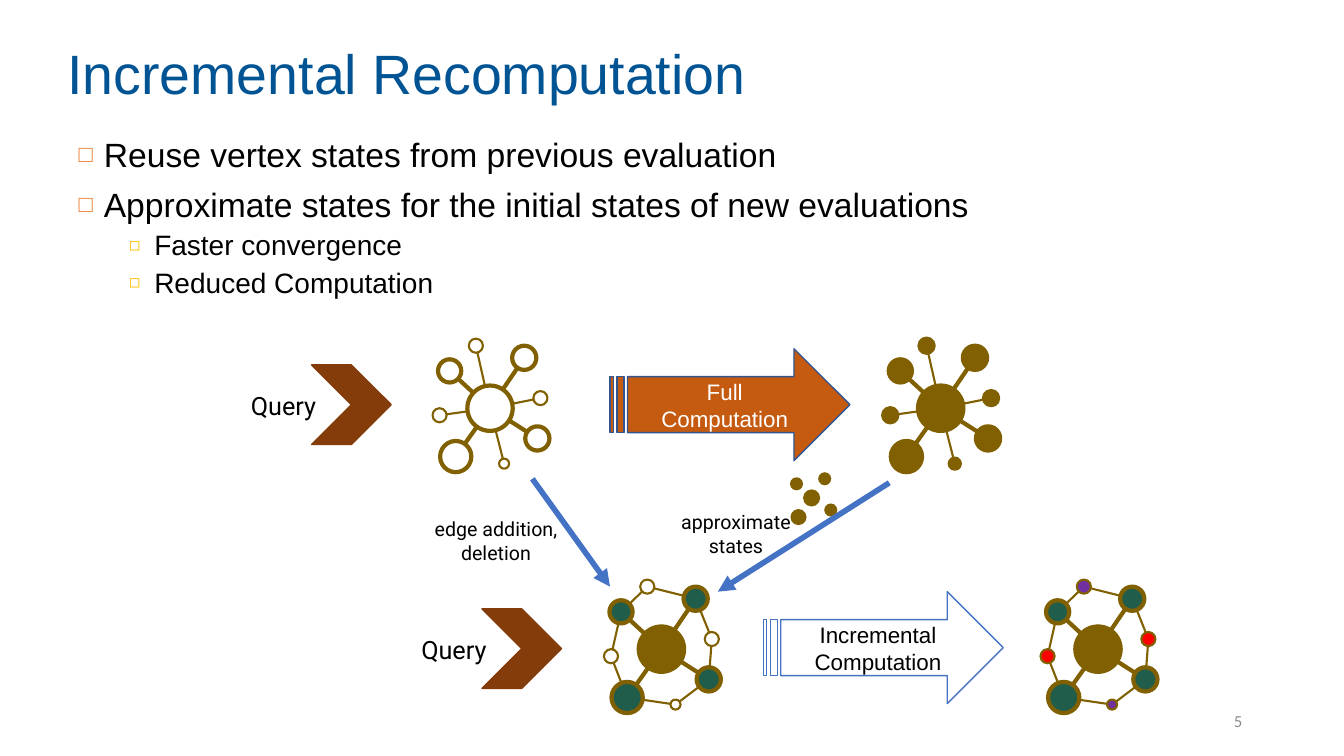
from lxml import etree
from pptx import Presentation
from pptx.dml.color import RGBColor
from pptx.enum import shapes, text
from pptx.oxml import ns
from pptx.util import Inches, Pt

COLORS = {
    "title": "005493", "black": "000000", "white": "FFFFFF", "gray": "8C8C8C",
    "olive": "806000", "green": "215D4B", "purple": "7030A0", "red": "FF0000",
    "rust": "C55A11", "navy": "325491", "blue": "4472C4", "brown": "843C0B",
    "orange": "ED7D31", "gold": "FFC000",
}
SHAPE, ALIGN, ANCHOR = shapes.MSO_SHAPE, text.PP_ALIGN, text.MSO_ANCHOR


def write(tf, content, size=16, color="black", font="Arial", align=ALIGN.CENTER,
          anchor=ANCHOR.TOP, wrap=True, spacing=1.0):
    tf.auto_size = text.MSO_AUTO_SIZE.NONE
    tf.word_wrap = wrap
    tf.vertical_anchor = anchor
    for i, line in enumerate(content.split("\n")):
        p = tf.paragraphs[0] if i == 0 else tf.add_paragraph()
        p.alignment = align
        p.line_spacing = spacing
        r = p.add_run()
        r.text = line
        r.font.name = font
        r.font.size = Pt(size)
        r.font.color.rgb = RGBColor.from_string(COLORS[color])


def draw(kind, x, y, w, h, fill, line=None, width=1):
    sp = s.shapes.add_shape(kind, Inches(x), Inches(y), Inches(w), Inches(h))
    sp.shadow.inherit = False
    sp.fill.solid()
    sp.fill.fore_color.rgb = RGBColor.from_string(COLORS[fill])
    if line:
        sp.line.color.rgb = RGBColor.from_string(COLORS[line])
        sp.line.width = Pt(width)
    else:
        sp.line.fill.background()
    return sp


prs = Presentation()
prs.slide_width, prs.slide_height = Inches(13.33), Inches(7.5)
s = prs.slides.add_slide(prs.slide_layouts[1])

title = s.shapes.title
title.left, title.top, title.width, title.height = [Inches(v) for v in (0.57, 0.44, 12.14, 0.64)]
write(title.text_frame, "Incremental Recomputation", size=39.6, color="title",
      align=ALIGN.LEFT, anchor=ANCHOR.MIDDLE, spacing=0.9)

body = s.placeholders[1]
body.left, body.top, body.width, body.height = [Inches(v) for v in (0.68, 1.32, 11.59, 2.3)]
write(body.text_frame, "Reuse vertex states from previous evaluation\n"
      "Approximate states for the initial states of new evaluations\n"
      "Faster convergence\nReduced Computation",
      size=24, align=ALIGN.LEFT, spacing=0.9)
levels = [(0.25, 24, 10, "orange", 70, "□"), (0.75, 20, 5, "gold", 65, "◻")]
for p, level in zip(body.text_frame.paragraphs, [0, 0, 1, 1]):
    indent, size, before, color, percent, char = levels[level]
    p.level = level
    p.space_before = Pt(before)
    p.runs[0].font.size = Pt(size)
    pPr = p._p.get_or_add_pPr()
    pPr.set("marL", str(Inches(indent)))
    pPr.set("indent", str(Inches(-0.25)))
    buClr = etree.SubElement(pPr, ns.qn("a:buClr"))
    etree.SubElement(buClr, ns.qn("a:srgbClr"), val=COLORS[color])
    etree.SubElement(pPr, ns.qn("a:buSzPct"), val=str(percent * 1000))
    etree.SubElement(pPr, ns.qn("a:buFont"), typeface="Arial")
    etree.SubElement(pPr, ns.qn("a:buChar"), char=char)

# name: offset from hub centre and diameter
NODES = {
    "hub": (0, 0, 0.45), "A": (0.47, 0.3, 0.24), "B": (-0.14, -0.62, 0.14),
    "C": (-0.4, -0.37, 0.23), "D": (0.34, -0.5, 0.24), "E": (-0.34, 0.48, 0.31),
    "F": (-0.5, 0.07, 0.14), "G": (0.5, -0.1, 0.14), "H": (0.14, 0.55, 0.1),
}
BIG = "ACDE"
SPOKES = [("hub", n) for n in "ABCDEFGH"]
RING = [("hub", n) for n in BIG] + [tuple(e) for e in ("EF", "FC", "CB", "BD", "DG", "GA", "AH", "HE")]
initial = dict.fromkeys(NODES, "white")
converged = dict.fromkeys(NODES, "olive")
changed = {**initial, "hub": "olive", **dict.fromkeys(BIG, "green")}
updated = {**changed, "B": "purple", "H": "purple", "F": "red", "G": "red"}
graphs = [
    (4.86, 4.05, SPOKES, initial, 1.5), (9.33, 4.05, SPOKES, converged, 3),
    (6.56, 6.44, RING, changed, 1.5), (10.89, 6.44, RING, updated, 1.5),
]
for x, y, edges, fills, small_width in graphs:
    for start, end in edges:
        (x1, y1, _), (x2, y2, _) = NODES[start], NODES[end]
        edge = s.shapes.add_connector(shapes.MSO_CONNECTOR.STRAIGHT, Inches(x + x1), Inches(y + y1),
                                      Inches(x + x2), Inches(y + y2))
        edge.line.color.rgb = RGBColor.from_string(COLORS["olive"])
        edge.line.width = Pt(3 if start == "hub" and end in BIG else 1.5)
    for name, (dx, dy, d) in NODES.items():
        width = 3 if name == "hub" or name in BIG else small_width
        draw(SHAPE.OVAL, x + dx - d / 2, y + dy - d / 2, d, d, fills[name], "olive", width)

stages = [
    (6.05, 3.46, "Full\nComputation", "rust", "navy", "white", 3.09, 3.62),
    (7.57, 5.87, "Incremental\nComputation", "white", "blue", "black", 4.78, 6.04),
]
for x, y, label, fill, line, color, query_x, query_y in stages:
    sp = draw(SHAPE.STRIPED_RIGHT_ARROW, x, y, 2.38, 1.11, fill, line)
    write(sp.text_frame, label, color=color, anchor=ANCHOR.MIDDLE)
    draw(SHAPE.CHEVRON, query_x, query_y, 0.79, 0.79, "brown", "brown")
    query = s.shapes.add_textbox(Inches(query_x - 0.7), Inches(query_y + 0.2), Inches(0.88), Inches(0.4))
    write(query.text_frame, "Query", size=18, font="Roboto", align=ALIGN.LEFT, wrap=False)

for x, y, d in [(8.05, 4.94, 0.17), (8.24, 5.06, 0.13), (7.9, 4.8, 0.13), (8.18, 4.75, 0.13), (7.92, 5.13, 0.16)]:
    draw(SHAPE.OVAL, x - d / 2, y - d / 2, d, d, "olive")

for x1, y1, x2, y2 in [(5.28, 4.75, 6.05, 5.82), (8.82, 4.79, 7.12, 5.87)]:
    arrow = s.shapes.add_connector(shapes.MSO_CONNECTOR.STRAIGHT, Inches(x1), Inches(y1), Inches(x2), Inches(y2))
    arrow.line.color.rgb = RGBColor.from_string(COLORS["blue"])
    arrow.line.width = Pt(4)
    etree.SubElement(arrow.line._get_or_add_ln(), ns.qn("a:tailEnd"), type="triangle")

for x, y, w, label in [(4.19, 5.08, 1.46, "edge addition,\ndeletion"), (6.65, 5.01, 1.3, "approximate\nstates")]:
    sp = s.shapes.add_textbox(Inches(x), Inches(y), Inches(w), Inches(0.57))
    write(sp.text_frame, label, size=14, font="Roboto", wrap=False)

number = s.shapes.add_textbox(Inches(9.42), Inches(6.95), Inches(3), Inches(0.4))
write(number.text_frame, "5", size=12, color="gray", font="Calibri", align=ALIGN.RIGHT, anchor=ANCHOR.MIDDLE)

for sp in s.shapes:
    if sp.shape_type == shapes.MSO_SHAPE_TYPE.LINE:
        etree.SubElement(sp._element.spPr, ns.qn("a:effectLst"))

prs.save("out.pptx")
